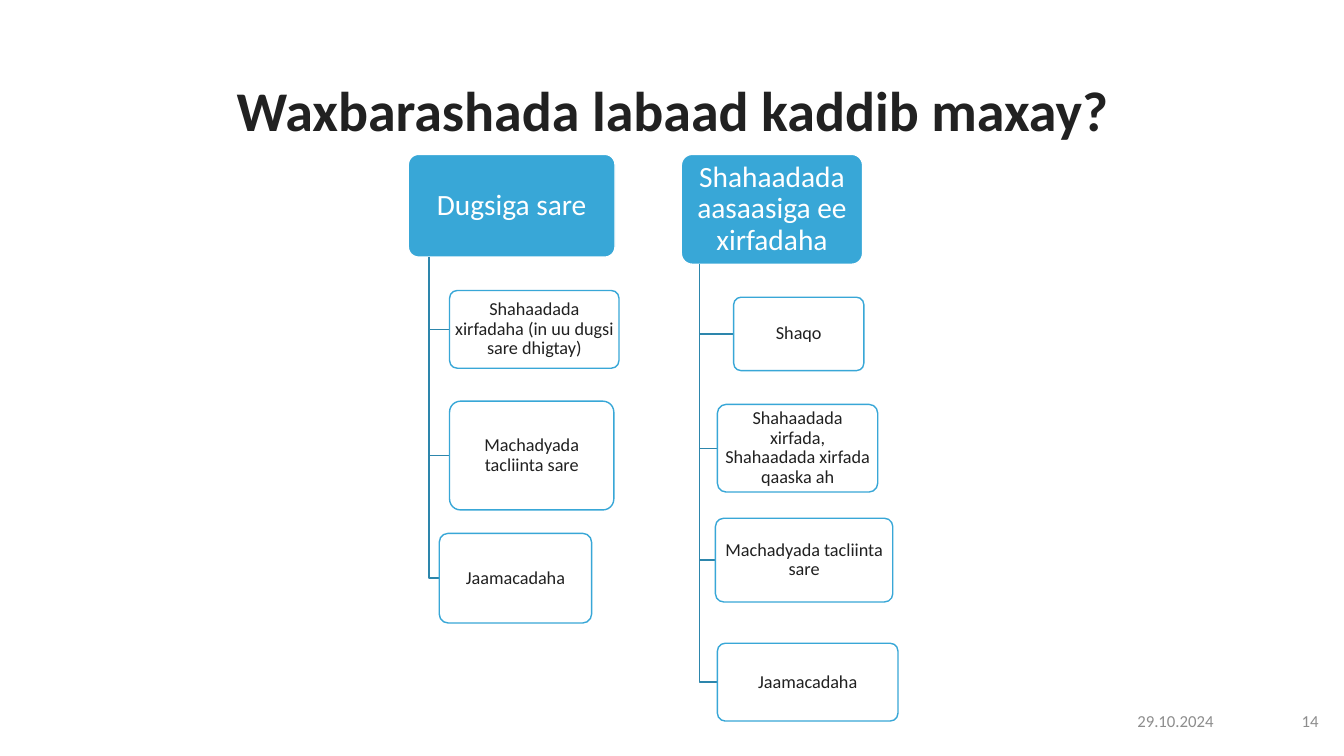
import pptx
import pptx.util
import pptx.dml.color
import pptx.enum.shapes
import pptx.enum.text
import pptx.oxml.ns
import lxml.etree

Cm = pptx.util.Cm
ALIGN = pptx.enum.text.PP_ALIGN
COLORS = {
    "box": "38A7D7",
    "branch": "2D86AC",
    "text": "212121",
    "footer": "8D8D8D",
    "white": "FFFFFF",
}


def color(name):
    return pptx.dml.color.RGBColor.from_string(COLORS[name])


def write(shape, text, size, ink, align, margins=(0.25, 0.13), spacing=1.0, bold=False):
    frame = shape.text_frame
    horizontal, vertical = map(Cm, margins)
    frame_format = {
        "text": text,
        "word_wrap": True,
        "vertical_anchor": pptx.enum.text.MSO_ANCHOR.MIDDLE,
        "margin_left": horizontal,
        "margin_right": horizontal,
        "margin_top": vertical,
        "margin_bottom": vertical,
    }
    for name, value in frame_format.items():
        setattr(frame, name, value)
    paragraph = frame.paragraphs[0]
    paragraph.alignment = align
    paragraph.line_spacing = spacing
    font = paragraph.runs[0].font
    font_format = {"name": "Calibri", "size": pptx.util.Pt(size), "bold": bold}
    for name, value in font_format.items():
        setattr(font, name, value)
    font.color.rgb = color(ink)


presentation = pptx.Presentation()
presentation.slide_width = Cm(33.87)
presentation.slide_height = Cm(19.05)
slide = presentation.slides.add_slide(presentation.slide_layouts[5])

title = slide.shapes.title
title_place = {"left": 2.34, "top": 1.02, "width": 29.21, "height": 3.68}
for name, value in title_place.items():
    setattr(title, name, Cm(value))
write(title, "Waxbarashada labaad kaddib maxay?", 40, "text", ALIGN.CENTER, spacing=0.9, bold=True)

trees = [
    [
        ("Dugsiga sare", 10.29, 3.89, 5.21, 2.59),
        ("Shahaadada xirfadaha (in uu dugsi sare dhigtay)", 11.33, 7.32, 4.27, 1.96),
        ("Machadyada tacliinta sare", 11.33, 10.11, 4.14, 2.74),
        ("Jaamacadaha", 11.07, 13.44, 3.84, 2.26),
    ],
    [
        ("Shahaadada aasaasiga ee xirfadaha", 17.17, 3.89, 4.57, 2.77),
        ("Shaqo", 18.49, 7.49, 3.28, 1.85),
        ("Shahaadada xirfada, Shahaadada xirfada qaaska ah", 18.08, 10.19, 4.04, 2.21),
        ("Machadyada tacliinta sare", 18.03, 13.06, 4.47, 2.11),
        ("Jaamacadaha", 18.08, 16.21, 4.55, 1.96),
    ],
]
for tree in trees:
    root_text, root_left, root_top, root_width, root_height = tree[0]
    trunk = Cm(root_left + root_width / 10)
    root_bottom = Cm(root_top + root_height)
    for level, (text, left, top, width, height) in enumerate(tree):
        is_root = level == 0
        if not is_root:
            middle = Cm(top + height / 2)
            builder = slide.shapes.build_freeform(trunk, root_bottom)
            builder.add_line_segments([(trunk, middle), (Cm(left), middle)], close=False)
            branch = builder.convert_to_shape()
            branch.shadow.inherit = False
            branch.fill.background()
            branch.line.color.rgb = color("branch")
            branch.line.width = pptx.util.Pt(1)
        box = slide.shapes.add_shape(
            pptx.enum.shapes.MSO_SHAPE.ROUNDED_RECTANGLE, Cm(left), Cm(top), Cm(width), Cm(height)
        )
        box.adjustments[0] = 0.1
        box.shadow.inherit = False
        box.fill.solid()
        box.fill.fore_color.rgb = color("box" if is_root else "white")
        box.line.color.rgb = color("white" if is_root else "box")
        box.line.width = pptx.util.Pt(1)
        if is_root:
            write(box, text, 21, "white", ALIGN.CENTER, (0.1, 0.08), 0.9)
        else:
            fill_color = box.fill._xPr.find(".//" + pptx.oxml.ns.qn("a:srgbClr"))
            lxml.etree.SubElement(fill_color, pptx.oxml.ns.qn("a:alpha"), val="90000")
            write(box, text, 13, "text", ALIGN.CENTER, (0.08, 0.05), 0.9)

for text, left, width in [("14", 31.12, 2.36), ("29.10.2024", 27.79, 3.05)]:
    footer = slide.shapes.add_textbox(Cm(left), Cm(17.65), Cm(width), Cm(1.02))
    write(footer, text, 12, "footer", ALIGN.RIGHT)

presentation.save("out.pptx")
